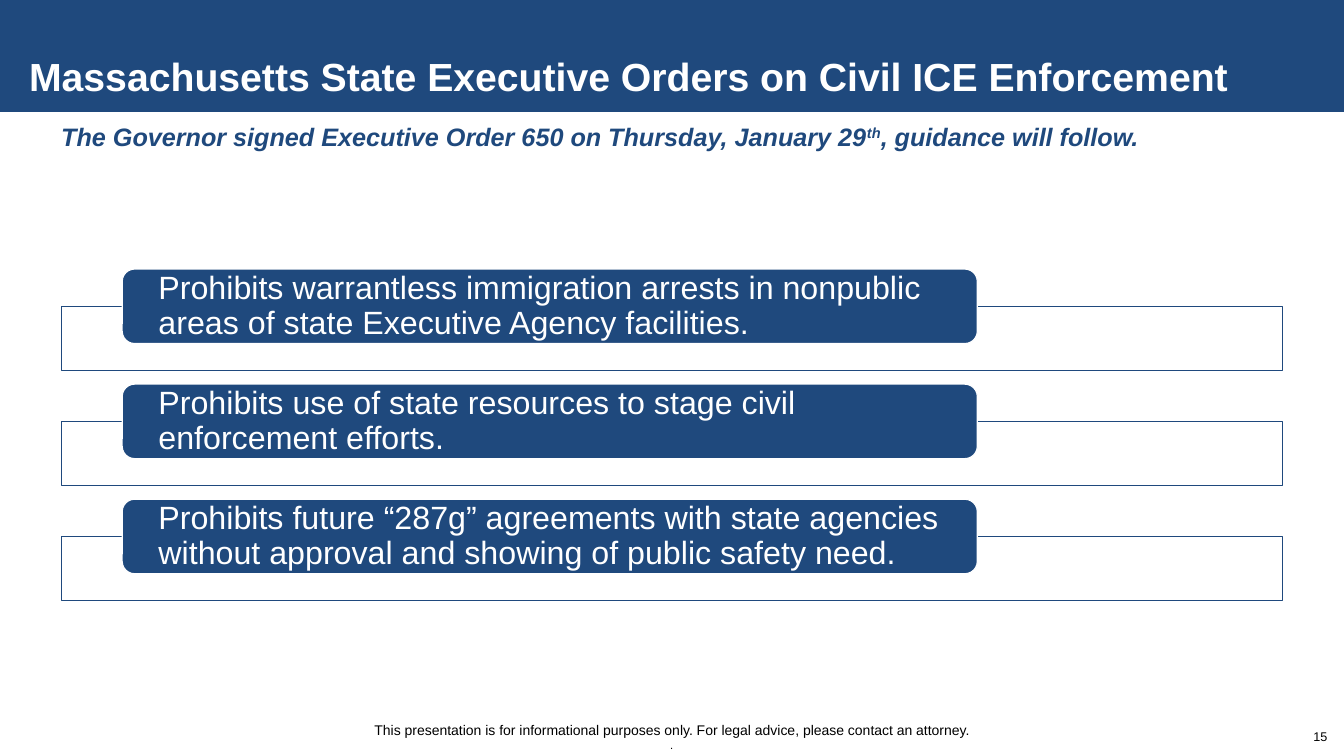
from dataclasses import dataclass

from pptx import Presentation, util as u
from pptx.dml.color import RGBColor
from pptx.enum import shapes, text
from pptx.oxml.ns import qn
from lxml import etree

Kind = shapes.MSO_SHAPE
Side = text.PP_ALIGN
Edge = text.MSO_ANCHOR


@dataclass(frozen=True)
class Theme:
    font: str = "Arial"
    navy: str = "1F497D"
    white: str = "FFFFFF"
    black: str = "000000"
    title: float = 28
    lead: float = 18
    item: float = 23
    foot: float = 10
    page: float = 9
    dot: float = 8
    rule: float = 0.85


class Deck:
    def __init__(self, theme, wide, high):
        self.theme = theme
        self.file = Presentation()
        self.file.slide_width, self.file.slide_height = u.Pt(wide), u.Pt(high)
        self.slide = self.file.slides.add_slide(self.file.slide_layouts[6])

    def shape(self, kind, box, fill, line, width, alpha=None):
        """Draw a filled shape; alpha is its opacity in percent."""
        item = self.slide.shapes.add_shape(kind, *map(u.Pt, box))
        item.shadow.inherit = False
        item.fill.solid()
        item.fill.fore_color.rgb = RGBColor.from_string(fill)
        item.line.color.rgb = RGBColor.from_string(line)
        item.line.width = u.Pt(width)
        if alpha:
            tint = item.fill._xPr.find(qn("a:solidFill"))[0]
            etree.SubElement(tint, qn("a:alpha")).set("val", str(alpha * 1000))
        return item

    def label(self, box):
        return self.slide.shapes.add_textbox(*map(u.Pt, box))

    def frame(self, item, inset=(0, 0), anchor=Edge.TOP):
        """Set up the text frame; inset is horizontal, then vertical."""
        body = item.text_frame
        body.word_wrap = True
        body.vertical_anchor = anchor
        body.margin_left = body.margin_right = u.Pt(inset[0])
        body.margin_top = body.margin_bottom = u.Pt(inset[1])
        return body

    def para(self, body, side=Side.LEFT, first=True):
        line = body.paragraphs[0] if first else body.add_paragraph()
        line.alignment = side
        return line

    def run(self, line, words, size, color, bold=False, slant=False, lift=0):
        """Add one run; lift raises it by a percentage of its size."""
        part = line.add_run()
        part.text = words
        font = part.font
        font.name, font.size = self.theme.font, u.Pt(size)
        font.bold, font.italic = bold, slant
        font.color.rgb = RGBColor.from_string(color)
        if lift:
            part._r.get_or_add_rPr().set("baseline", str(lift * 1000))

    def order(self, top, words):
        """Draw an outlined band with a rounded caption over its top edge."""
        t = self.theme
        self.shape(Kind.RECTANGLE, (43.7, top + 26.6, 872.6, 45.7),
                   t.white, t.navy, t.rule, 90)
        tab = self.shape(Kind.ROUNDED_RECTANGLE, (87.3, top, 610.8, 53.2),
                         t.navy, t.white, t.rule)
        line = self.para(self.frame(tab, (23.3, 0), Edge.MIDDLE))
        line.line_spacing = 0.9
        self.run(line, words, t.item, t.white)


ORDERS = [
    "Prohibits warrantless immigration arrests in nonpublic areas of state "
    "Executive Agency facilities.",
    "Prohibits use of state resources to stage civil enforcement efforts.",
    "Prohibits future “287g” agreements with state agencies without approval "
    "and showing of public safety need.",
]


def main():
    t = Theme()
    deck = Deck(t, 960, 540)

    deck.shape(Kind.RECTANGLE, (0, 0, 960, 79), t.navy, t.navy, 2)
    body = deck.frame(deck.label((19.4, 13.7, 859, 57.6)), anchor=Edge.BOTTOM)
    deck.run(deck.para(body, Side.CENTER),
             "Massachusetts State Executive Orders on Civil ICE Enforcement",
             t.title, t.white, bold=True)

    line = deck.para(deck.frame(deck.label((43.7, 86.4, 872.6, 21.6))))
    for words, lift in [
        ("The Governor signed Executive Order 650 on Thursday, January 29", 0),
        ("th", 30),
        (", guidance will follow.", 0),
    ]:
        deck.run(line, words, t.lead, t.navy, True, True, lift)

    for row, words in enumerate(ORDERS):
        deck.order(192.2 + 82.2 * row, words)

    body = deck.frame(deck.label((195.1, 511.9, 569.5, 28.8)), (7.2, 3.6))
    deck.run(deck.para(body, Side.CENTER),
             "This presentation is for informational purposes only. "
             "For legal advice, please contact an attorney.",
             t.foot, t.black)
    deck.run(deck.para(body, Side.CENTER, first=False), ".", t.dot, t.black)

    body = deck.frame(deck.label((922.3, 520.6, 25.9, 10.8)),
                      anchor=Edge.BOTTOM)
    deck.run(deck.para(body, Side.RIGHT), "15", t.page, t.black)

    deck.file.save("out.pptx")


if __name__ == "__main__":
    main()
